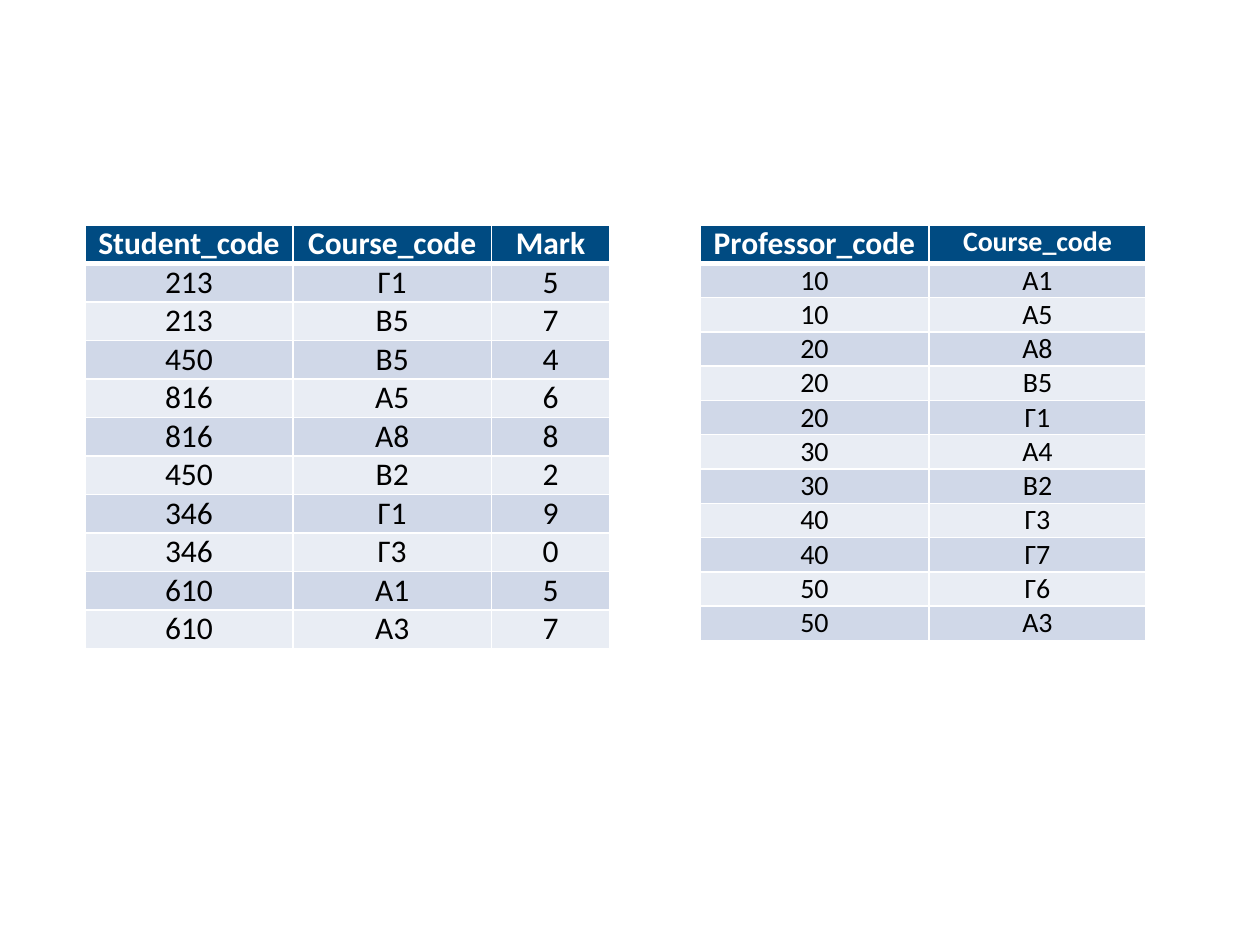
import pptx
import pptx.util
import pptx.dml.color
import pptx.enum.text
import pptx.oxml
import pptx.oxml.ns

Pt = pptx.util.Pt

HUES = {
    "head": "004B82",
    "odd": "D0D8E8",
    "even": "E9EDF4",
    "white": "FFFFFF",
    "black": "000000",
}

MARKS = [
    ("213", "Γ1", "5"),
    ("213", "Β5", "7"),
    ("450", "Β5", "4"),
    ("816", "Α5", "6"),
    ("816", "Α8", "8"),
    ("450", "Β2", "2"),
    ("346", "Γ1", "9"),
    ("346", "Γ3", "0"),
    ("610", "Α1", "5"),
    ("610", "Α3", "7"),
]

TEACH = [
    ("10", "Α1"),
    ("10", "Α5"),
    ("20", "Α8"),
    ("20", "Β5"),
    ("20", "Γ1"),
    ("30", "Α4"),
    ("30", "Β2"),
    ("40", "Γ3"),
    ("40", "Γ7"),
    ("50", "Γ6"),
    ("50", "Α3"),
]


class Deck:
    font = "Calibri"
    pad = 5

    def __init__(self, slide):
        self.slide = slide

    def hue(self, name):
        return pptx.dml.color.RGBColor.from_string(HUES[name])

    def edge(self, cell, side, width):
        props = cell._tc.get_or_add_tcPr()
        props.append(pptx.oxml.parse_xml(
            f'<a:ln{side} {pptx.oxml.ns.nsdecls("a")} w="{Pt(width)}">'
            f'<a:solidFill><a:srgbClr val="{HUES["white"]}"/></a:solidFill>'
            f'</a:ln{side}>'))

    def cell(self, cell, row, text, size):
        head = row == 0
        cell.margin_left = cell.margin_right = Pt(self.pad)
        cell.margin_top = cell.margin_bottom = 0
        for side in "LRTB":
            thick = (side == "B" and head) or (side == "T" and row == 1)
            self.edge(cell, side, 3 if thick else 1)
        cell.fill.solid()
        cell.fill.fore_color.rgb = self.hue(
            "head" if head else "odd" if row % 2 else "even")
        para = cell.text_frame.paragraphs[0]
        para.alignment = pptx.enum.text.PP_ALIGN.CENTER
        run = para.add_run()
        run.text = text
        run.font.name = self.font
        run.font.size = Pt(size)
        run.font.bold = head
        run.font.color.rgb = self.hue("white" if head else "black")

    def table(self, left, top, widths, heads, sizes, rows, size, high):
        data = [heads] + rows
        tall = [22] + [high] * len(rows)
        grid = self.slide.shapes.add_table(
            len(data), len(widths), Pt(left), Pt(top),
            Pt(sum(widths)), Pt(sum(tall))).table
        for col, width in zip(grid.columns, widths):
            col.width = Pt(width)
        for row, texts in enumerate(data):
            grid.rows[row].height = Pt(tall[row])
            for col, text in enumerate(texts):
                self.cell(grid.cell(row, col), row, text,
                          size if row else sizes[col])


def main():
    show = pptx.Presentation()
    show.slide_width, show.slide_height = Pt(720), Pt(540)
    deck = Deck(show.slides.add_slide(show.slide_layouts[6]))
    deck.table(48.5, 128.5, (119, 113.3, 67.7),
               ("Student_code", "Course_code", "Mark"), (18, 18, 18),
               MARKS, 18, 22)
    deck.table(400, 128.5, (130.8, 124.2),
               ("Professor_code", "Course_code"), (18, 16),
               TEACH, 16, 19.5)
    show.save("out.pptx")


if __name__ == "__main__":
    main()
